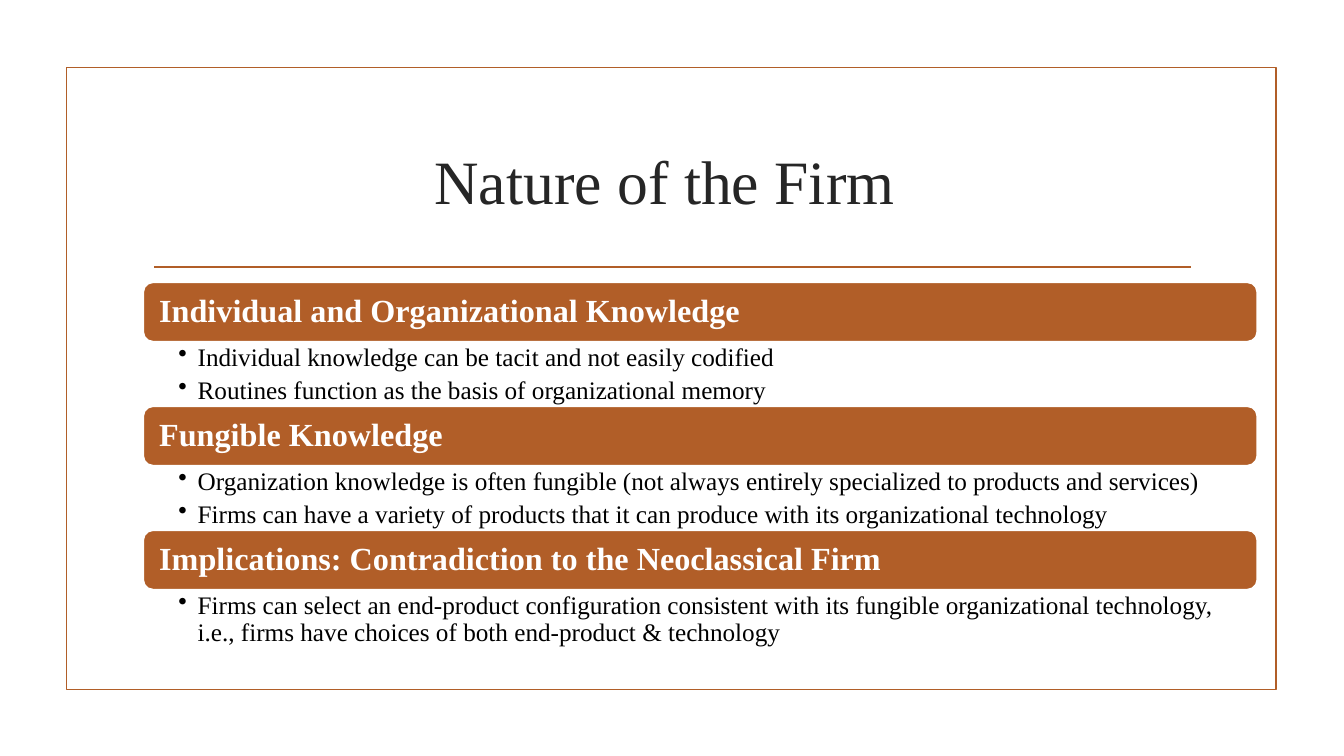
from pptx import Presentation
from pptx.dml.color import RGBColor
from pptx.enum.shapes import MSO_CONNECTOR as Link, MSO_SHAPE as Kind
from pptx.enum.text import MSO_ANCHOR as Anchor, PP_ALIGN as Align
from pptx.oxml.ns import qn
from pptx.util import Inches, Pt
from lxml.etree import SubElement

TITLE = "Nature of the Firm "
TOPICS = [
    ("Individual and Organizational Knowledge", [
        "Individual knowledge can be tacit and not easily codified",
        "Routines function as the basis of organizational memory"]),
    ("Fungible Knowledge", [
        "Organization knowledge is often fungible (not always entirely specialized to products and services)",
        "Firms can have a variety of products that it can produce with its organizational technology"]),
    ("Implications: Contradiction to the Neoclassical Firm", [
        "Firms can select an end-product configuration consistent with its fungible organizational technology, "
        "i.e., firms have choices of both end-product & technology"]),
]
FONT, RUST, WHITE, BLACK, DARK = "Times New Roman", "B15E28", "FFFFFF", "000000", "262626"
WIDE, HIGH = 13.33, 7.5
LEFT, TOP, SPAN = 1.42, 2.8, 11.05
BAR, BODY = 0.59, 0.64


def tint(code):
    """Turn a hex string into a colour."""
    return RGBColor.from_string(code)


def style(item, size, code, bold=False):
    """Set the font of a paragraph's runs."""
    for run in item.runs:
        font = run.font
        font.name, font.size, font.bold = FONT, Pt(size), bold
        font.color.rgb = tint(code)


def inset(frame, left, top, right, low):
    """Set wrapping and margins in inches."""
    frame.word_wrap = True
    frame.margin_left, frame.margin_top = Inches(left), Inches(top)
    frame.margin_right, frame.margin_bottom = Inches(right), Inches(low)


def block(slide, kind, box, edge, fill=None):
    """Add an outlined shape with an optional fill."""
    shape = slide.shapes.add_shape(kind, *map(Inches, box))
    shape.shadow.inherit = False
    if fill:
        shape.fill.solid()
        shape.fill.fore_color.rgb = tint(fill)
    else:
        shape.fill.background()
    shape.line.color.rgb = tint(edge)
    shape.line.width = Pt(1.25)
    return shape


def rule(slide, left, right, top):
    """Add the line below the title."""
    line = slide.shapes.add_connector(Link.STRAIGHT, *map(Inches, (left, top, right, top)))
    line.line.color.rgb = tint(RUST)
    line.line.width = Pt(1.25)
    SubElement(line._element.spPr, qn("a:effectLst"))


def head(slide):
    """Add the centred title."""
    frame = slide.shapes.add_textbox(*map(Inches, (0.54, 1.07, 12.26, 1.43))).text_frame
    inset(frame, 0.1, 0.05, 0.1, 0.05)
    frame.vertical_anchor = Anchor.MIDDLE
    frame.text = TITLE
    frame.paragraphs[0].alignment = Align.CENTER
    style(frame.paragraphs[0], 44, DARK)


def banner(slide, text, top):
    """Add a topic bar with its heading."""
    frame = block(slide, Kind.ROUNDED_RECTANGLE, (LEFT, top, SPAN, BAR), WHITE, RUST).text_frame
    inset(frame, 0.13, 0.1, 0.13, 0.1)
    frame.vertical_anchor = Anchor.MIDDLE
    frame.text = text
    item = frame.paragraphs[0]
    item.alignment, item.line_spacing = Align.LEFT, 0.9
    style(item, 23, WHITE, True)


def points(slide, lines, top):
    """Add the bullets under a topic bar."""
    frame = slide.shapes.add_textbox(*map(Inches, (LEFT, top, SPAN, BODY))).text_frame
    inset(frame, 0.35, 0.03, 0.18, 0.03)
    frame.text = "\n".join(lines)
    for item in frame.paragraphs:
        props = item._p.get_or_add_pPr()
        props.set("marL", str(Inches(0.19)))
        props.set("indent", str(-Inches(0.19)))
        SubElement(props, qn("a:buChar")).set("char", "•")
        item.line_spacing, item.space_after = 0.9, Pt(4)
        style(item, 18, BLACK)


def main():
    """Build and save the slide."""
    deck = Presentation()
    deck.slide_width, deck.slide_height = Inches(WIDE), Inches(HIGH)
    slide = deck.slides.add_slide(deck.slide_layouts[6])
    block(slide, Kind.RECTANGLE, (0.66, 0.67, 12, 6.17), RUST)
    rule(slide, 1.53, 11.81, 2.65)
    head(slide)
    for row, (text, lines) in enumerate(TOPICS):
        top = TOP + row * (BAR + BODY)
        banner(slide, text, top)
        points(slide, lines, top + BAR)
    deck.save("out.pptx")


if __name__ == "__main__":
    main()
